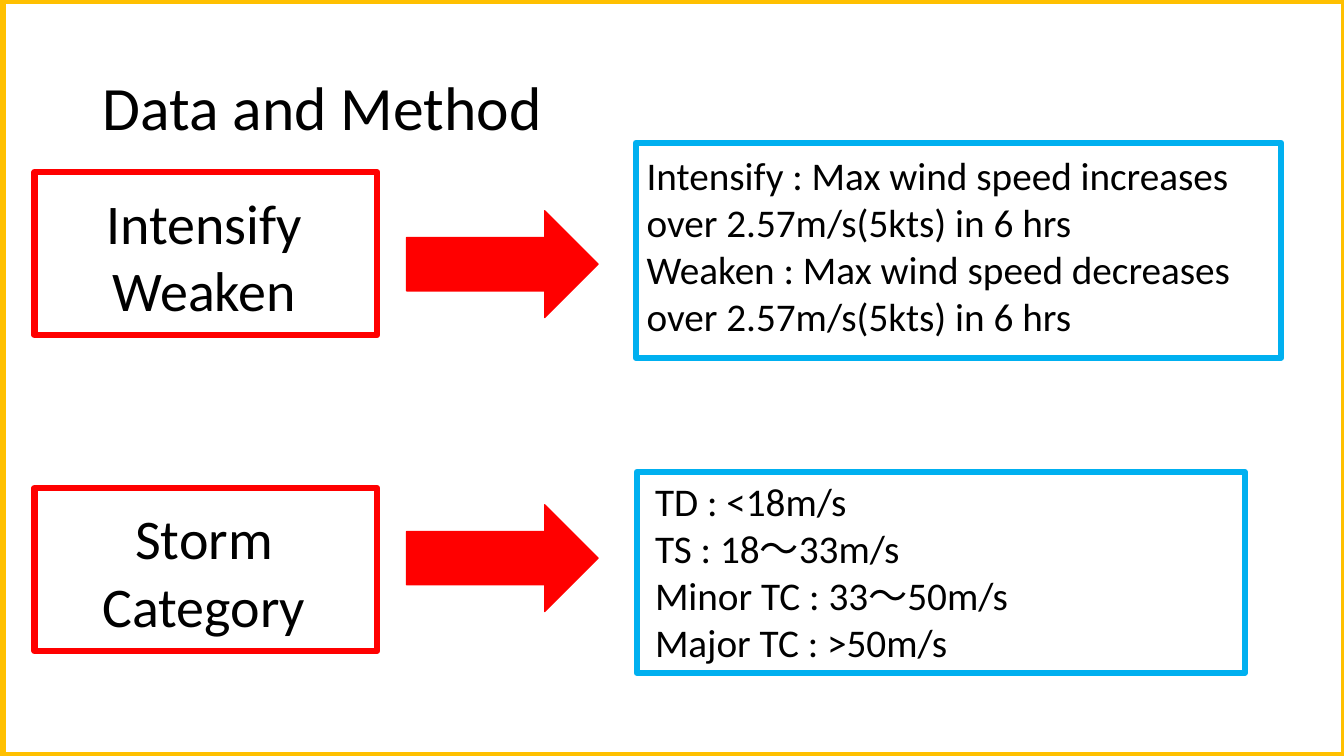
from dataclasses import dataclass
from typing import Optional

import pptx
import pptx.dml.color
import pptx.enum.shapes
import pptx.enum.text
import pptx.util

SLIDE_WIDTH = pptx.util.Inches(13.33)
SLIDE_HEIGHT = pptx.util.Inches(7.5)
COLUMNS, ROWS = 160, 90
FONT = "Calibri"
COLORS = {
    "paper": "FFFFFF",
    "ink": "000000",
    "frame": "FFC000",
    "topic": "FF0000",
    "detail": "00B0F0",
}
SHAPE = pptx.enum.shapes.MSO_SHAPE
ALIGN = pptx.enum.text.PP_ALIGN
ANCHOR = pptx.enum.text.MSO_ANCHOR


@dataclass(frozen=True)
class Area:
    """Place on the slide, in grid columns and rows."""
    col: float
    row: float
    cols: float
    rows: float

    def emu(self) -> tuple[int, int, int, int]:
        return (
            round(self.col * SLIDE_WIDTH / COLUMNS),
            round(self.row * SLIDE_HEIGHT / ROWS),
            round(self.cols * SLIDE_WIDTH / COLUMNS),
            round(self.rows * SLIDE_HEIGHT / ROWS),
        )


@dataclass(frozen=True)
class Definition:
    """A topic, its arrow and the box that explains it."""
    topic: tuple[str, ...]
    topic_row: float
    arrow_row: float
    detail_box: Area
    detail_area: Area
    details: tuple[str, ...]


DEFINITIONS = (
    Definition(
        ("Intensify", "Weaken"), 20.5, 25.1,
        Area(75.7, 17, 76.8, 25.6), Area(75.8, 17.4, 74.4, 29.5),
        (
            "Intensify : Max wind speed increases over 2.57m/s(5kts) in 6 hrs",
            "Weaken : Max wind speed decreases over 2.57m/s(5kts) in 6 hrs",
        ),
    ),
    Definition(
        ("Storm", "Category"), 58.1, 60.1,
        Area(75.8, 56.2, 72.4, 23.9), Area(76.8, 56.2, 74.4, 23.9),
        (
            "TD : <18m/s",
            "TS : 18～33m/s",
            "Minor TC : 33～50m/s",
            "Major TC : >50m/s",
        ),
    ),
)


def rgb(name: str) -> pptx.dml.color.RGBColor:
    return pptx.dml.color.RGBColor.from_string(COLORS[name])


def draw_shape(slide, kind, area: Area, line: str, weight: float,
               fill: Optional[str] = None) -> None:
    shape = slide.shapes.add_shape(kind, *area.emu())
    shape.shadow.inherit = False
    if fill:
        shape.fill.solid()
        shape.fill.fore_color.rgb = rgb(fill)
    else:
        shape.fill.background()
    shape.line.color.rgb = rgb(line)
    shape.line.width = pptx.util.Pt(weight)


def draw_text(slide, area: Area, lines: tuple[str, ...], size: float,
              align=ALIGN.LEFT, anchor=ANCHOR.TOP, spacing: float = 1.0) -> None:
    frame = slide.shapes.add_textbox(*area.emu()).text_frame
    frame.word_wrap = True
    frame.vertical_anchor = anchor
    for index, line in enumerate(lines):
        paragraph = frame.add_paragraph() if index else frame.paragraphs[0]
        paragraph.alignment = align
        paragraph.line_spacing = spacing
        run = paragraph.add_run()
        run.text = line
        run.font.name = FONT
        run.font.size = pptx.util.Pt(size)
        run.font.color.rgb = rgb("ink")


def draw_definition(slide, item: Definition) -> None:
    # Topic box and its label
    draw_shape(slide, SHAPE.RECTANGLE, Area(4.1, item.topic_row, 40.8, 19.4), "topic", 4.5)
    draw_text(slide, Area(-1, item.topic_row + 1.3, 50.6, 17.4), item.topic, 40, ALIGN.CENTER)
    # Arrow from topic to details
    draw_shape(slide, SHAPE.RIGHT_ARROW, Area(48.4, item.arrow_row, 22.8, 12.7),
               "topic", 1, fill="topic")
    # Detail box and its text
    draw_shape(slide, SHAPE.RECTANGLE, item.detail_box, "detail", 4.5)
    draw_text(slide, item.detail_area, item.details, 28)


def main() -> None:
    deck = pptx.Presentation()
    deck.slide_width, deck.slide_height = SLIDE_WIDTH, SLIDE_HEIGHT
    slide = deck.slides.add_slide(deck.slide_layouts[6])
    slide.background.fill.solid()
    slide.background.fill.fore_color.rgb = rgb("paper")

    # Heading and slide frame
    draw_text(slide, Area(11, 4.4, 138, 17.4), ("Data and Method",), 44,
              anchor=ANCHOR.MIDDLE, spacing=0.9)
    draw_shape(slide, SHAPE.RECTANGLE, Area(0.2, 0, COLUMNS, ROWS), "frame", 6)

    # Definitions
    for item in DEFINITIONS:
        draw_definition(slide, item)

    deck.save("out.pptx")


if __name__ == "__main__":
    main()
